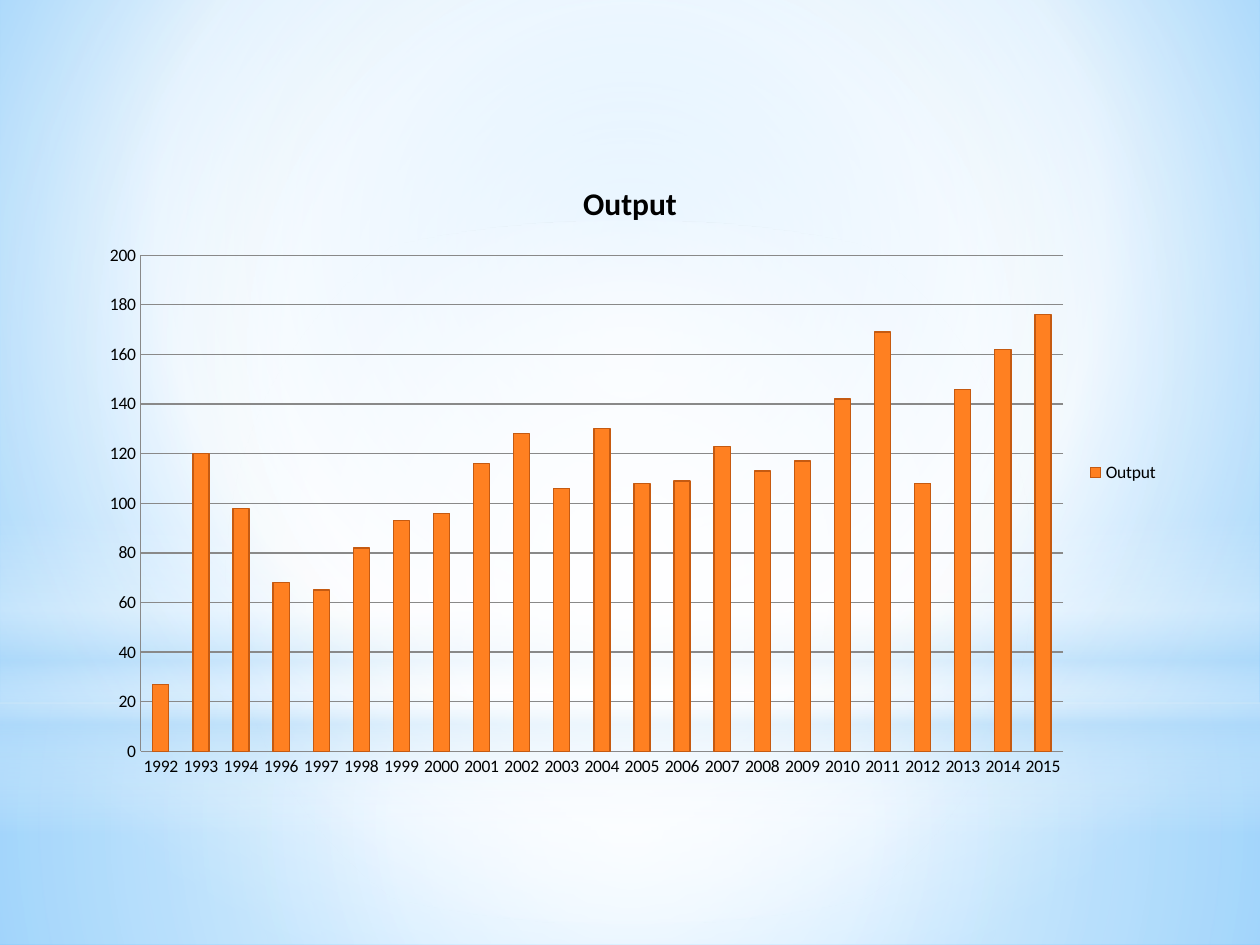
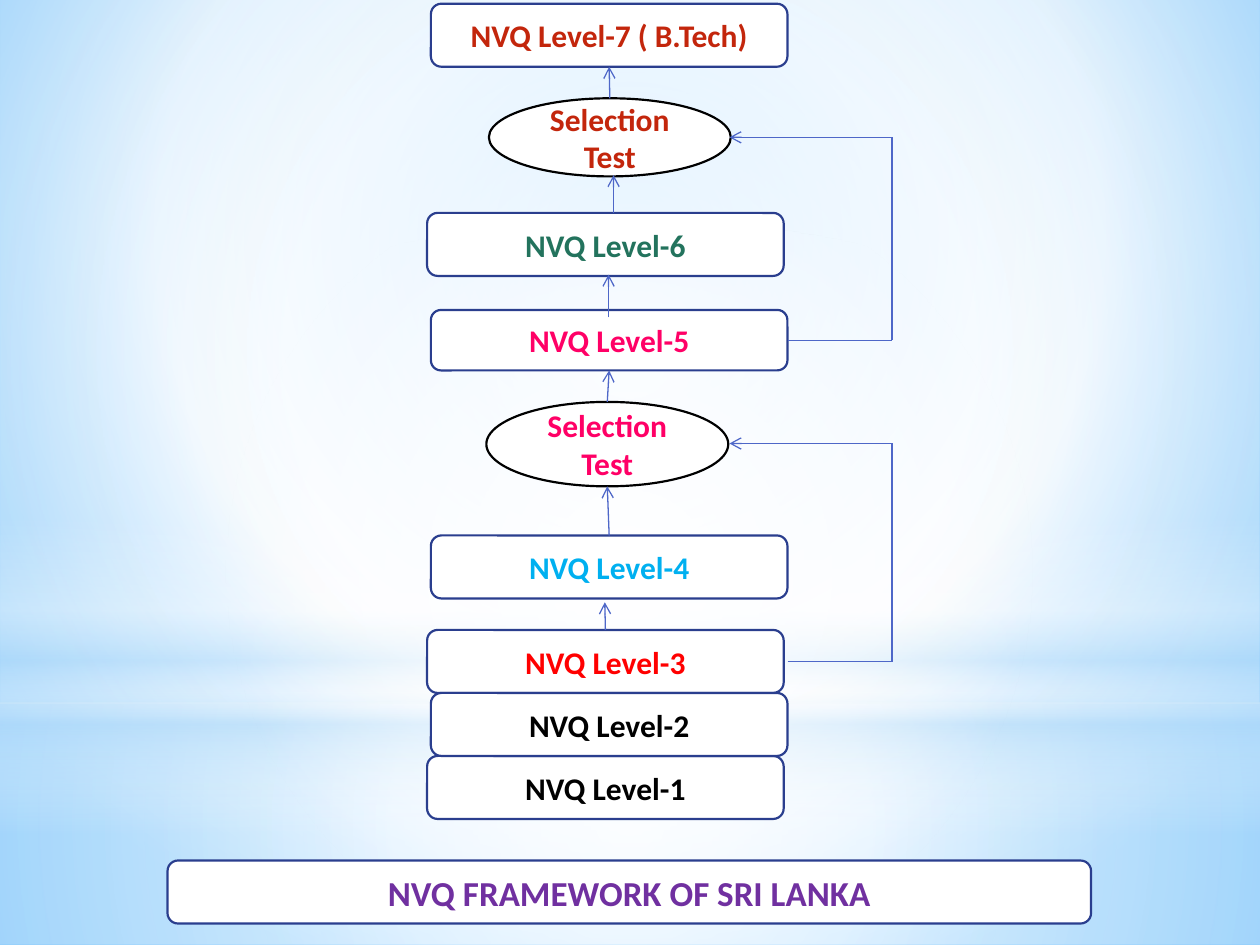
"""Build the output chart and the NVQ framework slides."""
from dataclasses import dataclass

from lxml.etree import SubElement
from pptx import Presentation
from pptx.chart.data import CategoryChartData
from pptx.dml.color import RGBColor
from pptx.enum.chart import XL_CHART_TYPE as ChartType
from pptx.enum.chart import XL_LEGEND_POSITION as LegendPosition
from pptx.enum.chart import XL_TICK_MARK as TickMark
from pptx.enum.shapes import MSO_CONNECTOR as Connector
from pptx.enum.shapes import MSO_SHAPE as Shape
from pptx.enum.text import MSO_ANCHOR as Anchor
from pptx.enum.text import PP_ALIGN as Align
from pptx.oxml import parse_xml
from pptx.oxml.ns import nsdecls, qn
from pptx.util import Inches, Pt


@dataclass(frozen=True)
class Theme:
    font: str = "Calibri"
    chart_size: int = 10
    box_size: int = 18
    banner_size: int = 20
    outline: float = 1.25
    hairline: float = 0.75
    black: str = "000000"
    white: str = "FFFFFF"
    navy: str = "2A3E8E"
    blue: str = "4E67C8"
    pale: str = "B4DCFA"
    sky: str = "9ED5FF"
    deep_sky: str = "5BB9FF"
    orange: str = "FF8021"
    rust: str = "C55A11"
    grid: str = "898989"
    brick: str = "C3260C"
    pink: str = "FF0066"
    green: str = "23735D"
    cyan: str = "00B0F0"
    red: str = "FF0000"
    purple: str = "7030A0"


THEME = Theme()
CENTRE = (50, 50, 50, 50)
YEARS = [str(year) for year in range(1992, 2016) if year != 1995]
OUTPUT = [27, 120, 98, 68, 65, 82, 93, 96, 116, 128, 106, 130,
          108, 109, 123, 113, 117, 142, 169, 108, 146, 162, 176]


def rgb(colour):
    return RGBColor.from_string(colour)


def gradient(stops, focus=None):
    """Return a gradient fill, circular around focus or running downwards."""
    marks = "".join(
        f'<a:gs pos="{position * 1000}"><a:srgbClr val="{colour}">'
        f'<a:alpha val="{alpha * 1000}"/></a:srgbClr></a:gs>'
        for position, colour, alpha in stops)
    if focus:
        sides = " ".join(f'{side}="{value * 1000}"' for side, value in zip("ltrb", focus))
        direction = f'<a:path path="circle"><a:fillToRect {sides}/></a:path>'
    else:
        direction = '<a:lin ang="5400000" scaled="0"/>'
    return parse_xml(f'<a:gradFill {nsdecls("a")} rotWithShape="1">'
                     f'<a:gsLst>{marks}</a:gsLst>{direction}</a:gradFill>')


def fill_gradient(fill, element, stops, focus):
    """Give the fill inside element the gradient of these stops."""
    fill.gradient()
    plain = next(element.iter(qn("a:gradFill")))
    plain.getparent().replace(plain, gradient(stops, focus))


class Deck:
    """Hold the theme and the current slide, and add elements to it."""

    def __init__(self, theme):
        self.theme = theme
        self.presentation = Presentation()
        self.presentation.slide_width = Inches(10)
        self.presentation.slide_height = Inches(7.5)
        self.slide = None

    def new_slide(self):
        self.slide = self.presentation.slides.add_slide(self.presentation.slide_layouts[6])

    def shape(self, kind, left, top, width, height):
        shape = self.slide.shapes.add_shape(
            kind, Inches(left), Inches(top), Inches(width), Inches(height))
        shape.shadow.inherit = False
        return shape

    def master_backdrop(self):
        """Put the sky gradient and its light layers on the slide master."""
        theme = self.theme
        white, pale = theme.white, theme.pale
        master = self.presentation.slide_master
        fill_gradient(master.background.fill, master.element,
                      [(0, theme.sky, 100), (60, white, 100), (100, theme.deep_sky, 100)],
                      (20, 10, 20, 60))
        layers = [
            (Shape.RECTANGLE, 5.58, 1.92,
             [(0, white, 91), (37, white, 76), (100, pale, 79)], CENTRE),
            (Shape.RECTANGLE, 0, 5.58,
             [(0, white, 89), (48, white, 62), (100, pale, 79)], CENTRE),
            (Shape.RECTANGLE, 4.12, 2.5,
             [(0, white, 0), (29, white, 30), (45, pale, 40),
              (55, white, 26), (65, pale, 60), (100, white, 0)], None),
            (Shape.OVAL, 1.75, 5.58, [(0, white, 100), (56, white, 0)], CENTRE),
        ]
        for number, (kind, top, height, stops, focus) in enumerate(layers, 101):
            layer = self.shape(kind, 0, top, 10, height)
            layer.line.fill.background()
            fill_gradient(layer.fill, layer.element, stops, focus)
            next(layer.element.iter(qn("p:cNvPr"))).set("id", str(number))
            master.shapes.element.append(layer.element)

    def box(self, text, left, top, width, height, colour,
            kind=Shape.ROUNDED_RECTANGLE, outline=None, size=None):
        theme = self.theme
        shape = self.shape(kind, left, top, width, height)
        shape.fill.solid()
        shape.fill.fore_color.rgb = rgb(theme.white)
        shape.line.color.rgb = rgb(outline or theme.navy)
        shape.line.width = Pt(theme.outline)
        frame = shape.text_frame
        frame.text = text
        frame.word_wrap = True
        frame.vertical_anchor = Anchor.MIDDLE
        paragraph = frame.paragraphs[0]
        paragraph.alignment = Align.CENTER
        self.bold(paragraph, size or theme.box_size, colour)
        return shape

    def bold(self, paragraph, size, colour):
        font = paragraph.runs[0].font
        font.name = self.theme.font
        font.size = Pt(size)
        font.bold = True
        font.color.rgb = rgb(colour)

    def level(self, number, left, top, colour, height=0.5, note=""):
        return self.box(f"NVQ Level-{number}{note}", left, top, 2.83, height, colour)

    def test(self, left, top, height, colour):
        return self.box("Selection Test", left, top, 1.92, height, colour,
                        Shape.OVAL, self.theme.black)

    def line(self, start, end, arrow=True, begin=None, finish=None):
        """Draw a line; begin and finish are (shape, site) pairs to join."""
        connector = self.slide.shapes.add_connector(
            Connector.STRAIGHT, *(Inches(value) for value in (*start, *end)))
        if begin:
            connector.begin_connect(*begin)
        if finish:
            connector.end_connect(*finish)
        connector.line.color.rgb = rgb(self.theme.blue)
        connector.line.width = Pt(self.theme.hairline)
        if arrow:
            outline = connector.element.spPr.find(qn("a:ln"))
            SubElement(outline, qn("a:tailEnd"), type="arrow")
        SubElement(connector.element.spPr, qn("a:effectLst"))

    def column_chart(self, name, categories, values, left, top, width, height):
        theme = self.theme
        data = CategoryChartData()
        data.categories = categories
        data.add_series(name, values)
        chart = self.slide.shapes.add_chart(
            ChartType.COLUMN_CLUSTERED, Inches(left), Inches(top),
            Inches(width), Inches(height), data).chart
        chart.font.name = theme.font
        chart.font.size = Pt(theme.chart_size)
        chart.font.color.rgb = rgb(theme.black)
        chart.has_title = True
        title = chart.chart_title.text_frame
        title.text = name
        self.bold(title.paragraphs[0], theme.box_size, theme.black)
        chart.has_legend = True
        chart.legend.position = LegendPosition.RIGHT
        chart.legend.include_in_layout = False
        chart.value_axis.has_major_gridlines = True
        for axis in (chart.category_axis, chart.value_axis):
            axis.major_tick_mark = TickMark.NONE
            axis.minor_tick_mark = TickMark.NONE
            axis.format.line.color.rgb = rgb(theme.grid)
        chart.value_axis.major_gridlines.format.line.color.rgb = rgb(theme.grid)
        chart.value_axis.maximum_scale = 200
        chart.value_axis.minimum_scale = 0
        chart.value_axis.major_unit = 20
        plot = chart.plots[0]
        plot.gap_width = 150
        plot.vary_by_categories = False
        series = plot.series[0]
        series.format.fill.solid()
        series.format.fill.fore_color.rgb = rgb(theme.orange)
        series.format.line.color.rgb = rgb(theme.rust)
        series.format.line.width = Pt(theme.hairline)


def build_output(deck):
    deck.new_slide()
    deck.master_backdrop()
    deck.column_chart("Output", YEARS, OUTPUT, 0.7, 1.24, 8.6, 5.02)


def build_framework(deck):
    theme = deck.theme
    left, right, bypass = 3.39, 3.42, 7.08
    deck.new_slide()
    deck.level(1, left, 6, theme.black)
    upper_test = deck.test(3.88, 0.78, 0.62, theme.brick)
    level_5 = deck.level(5, right, 2.46, theme.pink, height=0.48)
    level_7 = deck.level(7, right, 0.03, theme.brick, note=" ( B.Tech)")
    deck.level(6, left, 1.69, theme.green)
    level_4 = deck.level(4, right, 4.25, theme.cyan)
    level_3 = deck.level(3, left, 5, theme.red)
    deck.level(2, right, 5.5, theme.black)
    lower_test = deck.test(3.86, 3.19, 0.67, theme.pink)

    deck.line((4.8, 5), (4.8, 4.78), begin=(level_3, 0))
    deck.line((4.83, 4.25), (4.82, 3.86), begin=(level_4, 0))
    deck.line((4.82, 3.19), (4.83, 2.94), begin=(lower_test, 0), finish=(level_5, 2))
    deck.line((4.83, 2.52), (4.83, 2.18))
    deck.line((4.87, 1.69), (4.87, 1.39))
    deck.line((4.83, 0.78), (4.83, 0.53), begin=(upper_test, 0), finish=(level_7, 2))

    for bottom, top, begin in ((2.7, 1.09, (level_5, 3)), (5.25, 3.52, None)):
        deck.line((6.25, bottom), (bypass, bottom), arrow=False, begin=begin)
        deck.line((bypass, top), (bypass, bottom), arrow=False)
        deck.line((bypass, top), (5.79, top))

    deck.box("NVQ FRAMEWORK OF SRI LANKA", 1.33, 6.83, 7.33, 0.5, theme.purple,
             size=theme.banner_size)


def main():
    deck = Deck(THEME)
    build_output(deck)
    build_framework(deck)
    deck.presentation.save("out.pptx")


if __name__ == "__main__":
    main()
